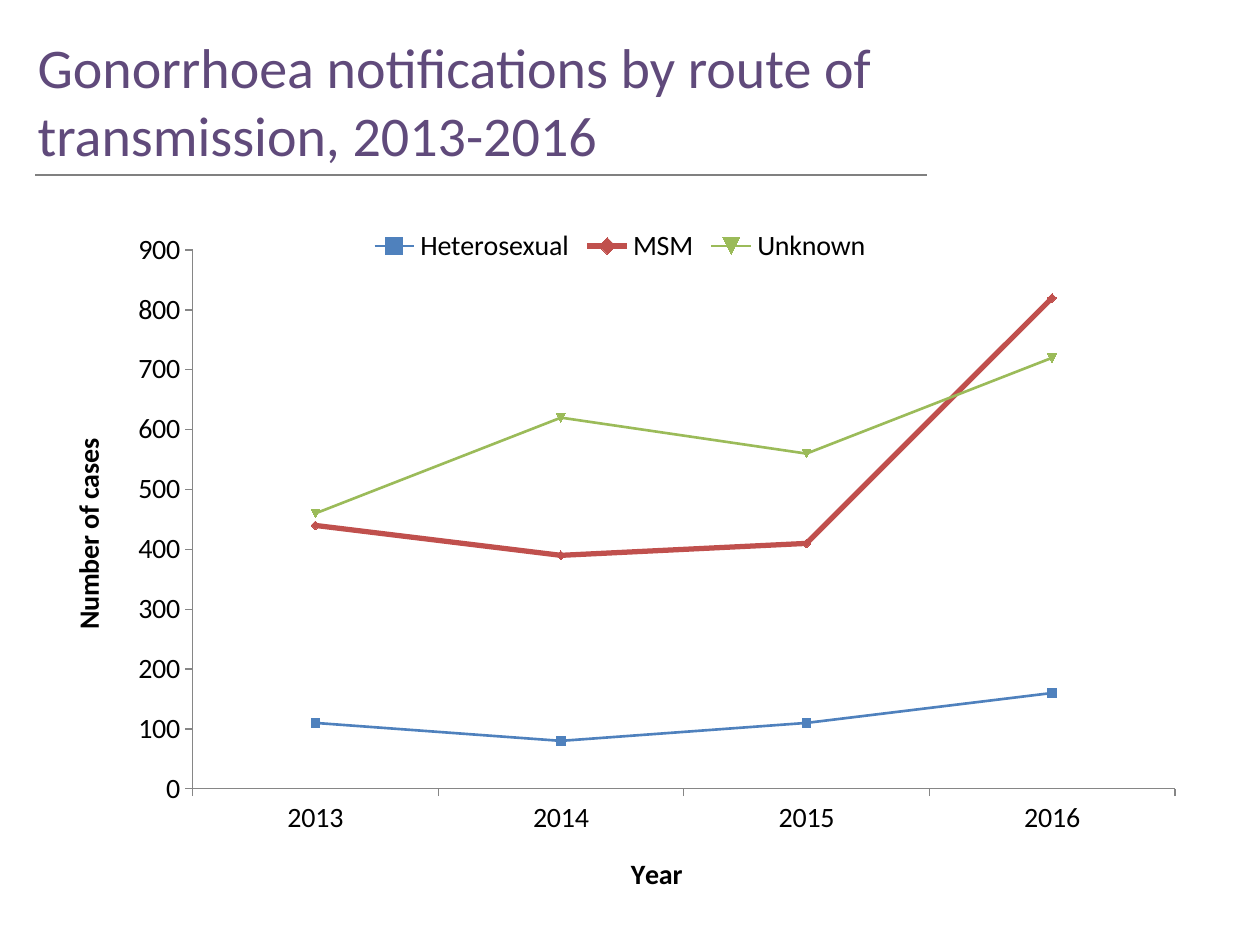
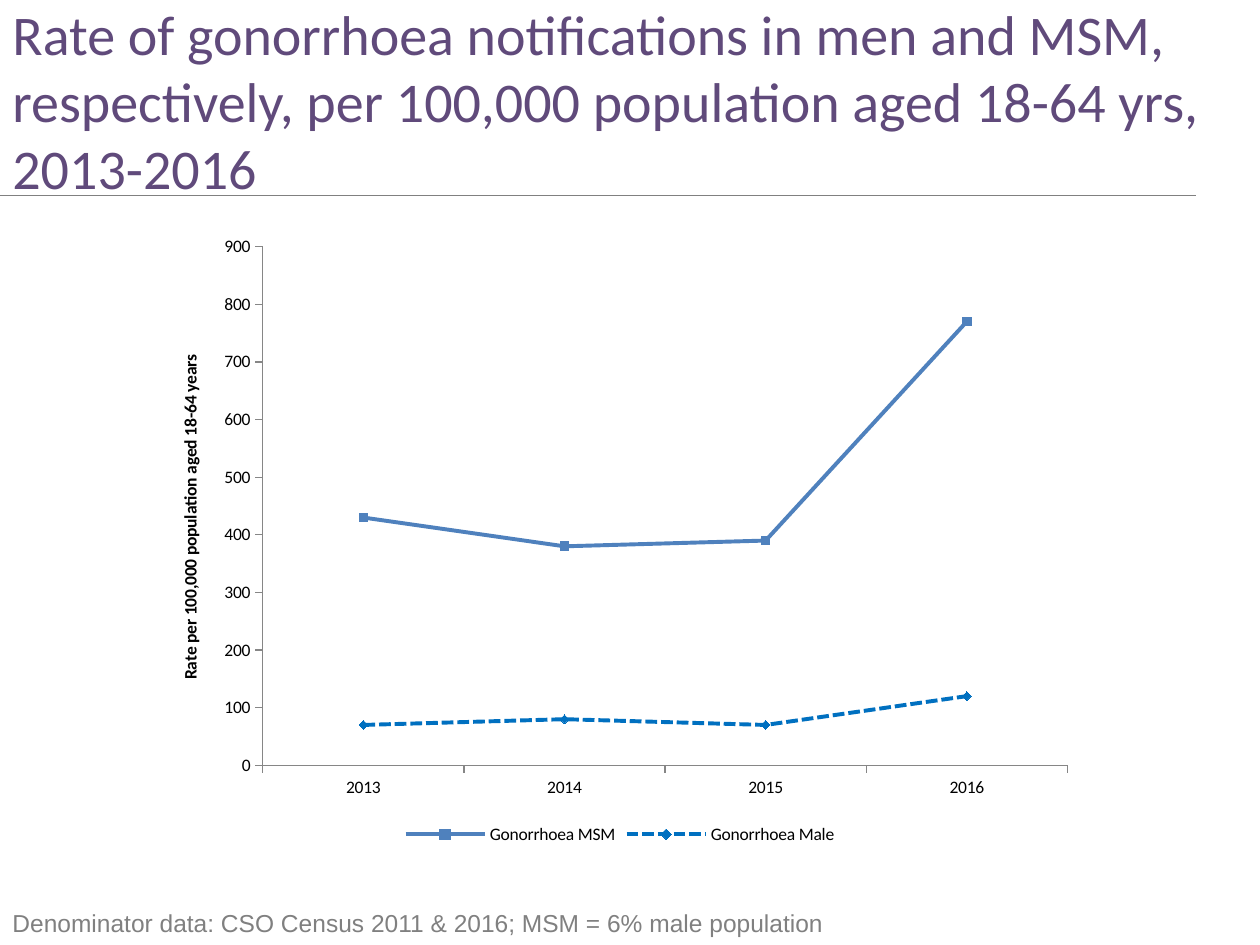
from lxml.etree import SubElement
from pptx import Presentation
from pptx.chart.data import CategoryChartData
from pptx.dml.color import RGBColor
from pptx.enum.chart import XL_CHART_TYPE as Kind, XL_LEGEND_POSITION as Legend
from pptx.enum.chart import XL_TICK_MARK as Tick
from pptx.enum.dml import MSO_LINE as Dash
from pptx.enum.shapes import MSO_CONNECTOR as Link
from pptx.enum.text import MSO_ANCHOR as Anchor
from pptx.oxml.ns import qn
from pptx.util import Inches, Pt

PURPLE, GREY, BLACK, AXIS = "604A7B", "808080", "000000", "868686"
BLUE, RED, GREEN, AZURE = "4F81BD", "C0504D", "9BBB59", "0070C0"
YEARS = ["2013", "2014", "2015", "2016"]


def rgb(code):
    return RGBColor.from_string(code)


def add_text(slide, box, text, font, size, color):
    shape = slide.shapes.add_textbox(*map(Inches, box))
    frame = shape.text_frame
    frame.word_wrap = True
    frame.text = text
    for run in frame.paragraphs[0].runs:
        run.font.name, run.font.size = font, Pt(size)
        run.font.color.rgb = rgb(color)
    return frame


# Series: name, values, colour, line width, dash
pages = [
    dict(
        title="Gonorrhoea notifications by route of\vtransmission, 2013-2016",
        left=0.2, rule=(0.28, 7.36, 1.39),
        box=(0.35, 1.7, 9.14, 5.59), plot=(0.129, 0.051, 0.853, 0.765),
        size=16, legend=Legend.TOP, xname="Year", yname="Number of cases",
        series=[
            ("Heterosexual", (110, 80, 110, 160), BLUE, 1.5, None),
            ("MSM", (440, 390, 410, 820), RED, 3, None),
            ("Unknown", (460, 620, 560, 720), GREEN, 1.5, None),
        ],
        note=None,
    ),
    dict(
        title="Rate of gonorrhoea notifications in men and MSM, respectively, "
              "per 100,000 population aged 18-64 yrs, 2013-2016",
        left=0, rule=(0, 9.49, 1.55),
        box=(1.22, 1.78, 7.4, 4.96), plot=(0.117, 0.036, 0.863, 0.83),
        size=10, legend=Legend.BOTTOM, xname=None,
        yname="Rate per 100,000 population aged 18-64 years",
        series=[
            ("Gonorrhoea MSM", (430, 380, 390, 770), BLUE, 2.25, None),
            ("Gonorrhoea Male", (70, 80, 70, 120), AZURE, 2.25, Dash.SQUARE_DOT),
        ],
        note="Denominator data: CSO Census 2011 & 2016; MSM = 6% male population",
    ),
]

prs = Presentation()
prs.slide_width, prs.slide_height = Inches(10), Inches(7.5)

for page in pages:
    slide = prs.slides.add_slide(prs.slide_layouts[6])

    # Title, raised above the middle of its box, and the rule below it
    box = (page["left"], 0.68, 9.89 - page["left"], 0.55)
    title = add_text(slide, box, page["title"], "Calibri", 32, PURPLE)
    title.vertical_anchor = Anchor.MIDDLE
    title.margin_bottom = Inches(0.37)
    start, end, y = map(Inches, page["rule"])
    rule = slide.shapes.add_connector(Link.STRAIGHT, start, y, end, y)
    rule.line.color.rgb = rgb(GREY)
    rule.line.width = Pt(0.75)
    SubElement(rule._element.spPr, qn("a:effectLst"))

    # Line chart
    data = CategoryChartData()
    data.categories = YEARS
    for name, values, *_ in page["series"]:
        data.add_series(name, values)
    chart = slide.shapes.add_chart(
        Kind.LINE, *map(Inches, page["box"]), data).chart
    chart.has_title = False
    chart.font.name, chart.font.size = "Calibri", Pt(page["size"])
    chart.font.color.rgb = rgb(BLACK)
    chart.has_legend = True
    chart.legend.position = page["legend"]
    chart.legend.include_in_layout = False
    chart.plots[0].vary_by_categories = False

    for line, (_, _, color, width, dash) in zip(chart.plots[0].series, page["series"]):
        line.smooth = False
        line.marker.style = None
        line.format.line.color.rgb = rgb(color)
        line.format.line.width = Pt(width)
        if dash:
            line.format.line.dash_style = dash

    across, up = chart.category_axis, chart.value_axis
    for axis, name in ((across, page["xname"]), (up, page["yname"])):
        axis.has_major_gridlines = False
        axis.major_tick_mark, axis.minor_tick_mark = Tick.OUTSIDE, Tick.NONE
        axis.format.line.color.rgb = rgb(AXIS)
        axis.format.line.width = Pt(0.75)
        axis.has_title = bool(name)
        if name:
            frame = axis.axis_title.text_frame
            frame.text = name
            font = frame.paragraphs[0].runs[0].font
            font.name, font.size, font.bold = "Calibri", Pt(page["size"]), True
            font.color.rgb = rgb(BLACK)
    up.minimum_scale, up.maximum_scale, up.major_unit = 0, 900, 100

    # Fixed inner plot area
    area = chart._chartSpace.chart.plotArea
    for old in area.findall(qn("c:layout")):
        area.remove(old)
    layout = SubElement(area, qn("c:layout"))
    area.insert(0, layout)
    manual = SubElement(layout, qn("c:manualLayout"))
    parts = [("layoutTarget", "inner"), ("xMode", "edge"), ("yMode", "edge")]
    for tag, value in parts + list(zip("xywh", page["plot"])):
        SubElement(manual, qn("c:" + tag)).set("val", str(value))

    if page["note"]:
        add_text(slide, (0, 7.16, 6.81, 0.34), page["note"], "Arial", 14, GREY)

prs.save("out.pptx")
